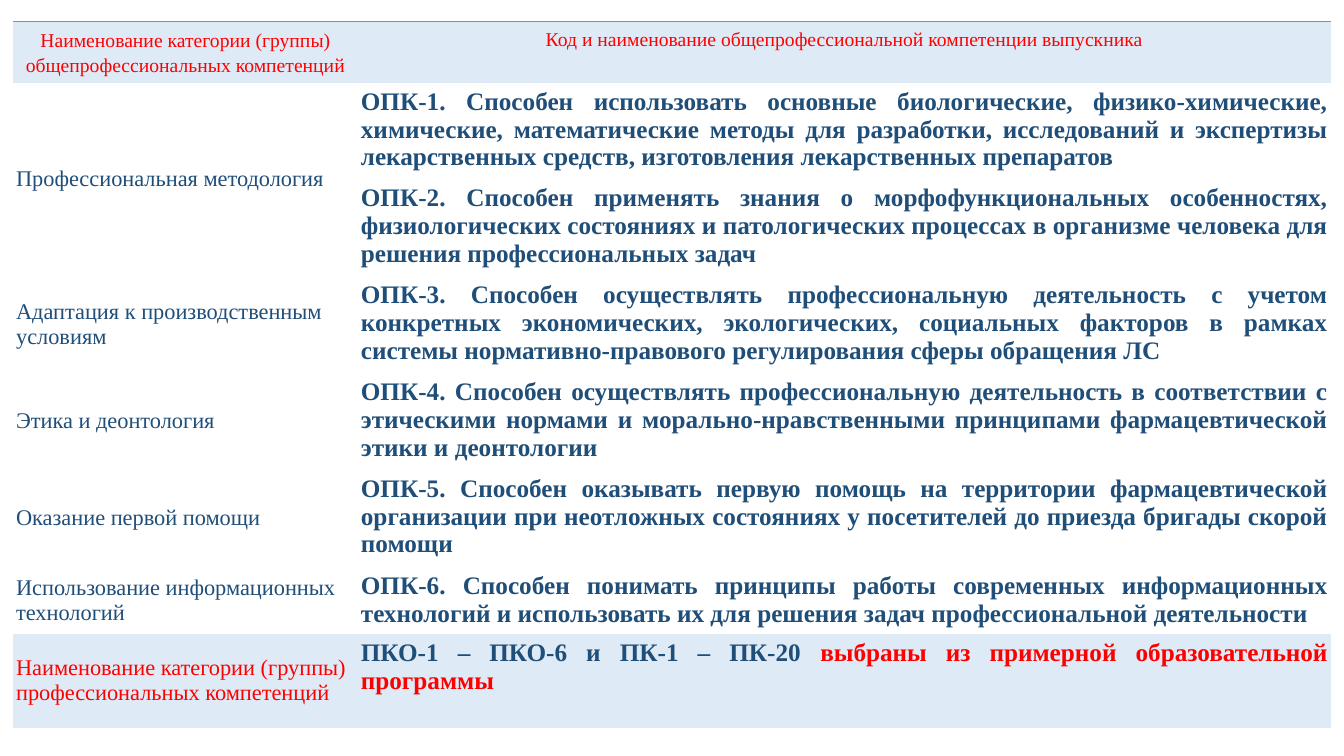
from dataclasses import dataclass

from lxml.etree import SubElement
from pptx import Presentation
from pptx.dml.color import RGBColor
from pptx.enum.text import MSO_ANCHOR as Anchor, PP_ALIGN as Align
from pptx.oxml.ns import qn
from pptx.table import Table, _Cell as Cell
from pptx.util import Inches, Pt

FONT = "Times New Roman"
RED, NAVY, PALE, BLUE = "FF0000", "1F4E79", "DEEBF7", "5B9BD5"
NO_STYLE = "{2D5ABB26-0587-4C30-8999-92F81FD0307C}"
WIDTHS = (3.42, 9.65)


@dataclass
class Run:
    text: str
    color: str = NAVY
    size: int = 16
    bold: bool = False


@dataclass
class Entry:
    runs: list[Run]
    align: Align = Align.LEFT
    anchor: Anchor = Anchor.MIDDLE
    spacing: float = 1.0


@dataclass
class Row:
    height: float
    left: Entry | None
    right: Entry | None
    fill: str | None = None


def head(text: str, anchor: Anchor) -> Entry:
    return Entry([Run(text, RED, 14)], Align.CENTER, anchor, 1.15)


def group(text: str, color: str = NAVY) -> Entry:
    return Entry([Run(text, color)])


def skill(text: str, extra: str = "", anchor: Anchor = Anchor.TOP) -> Entry:
    runs = [Run(text, NAVY, 18, True)]
    if extra:
        runs.append(Run(extra, RED, 18, True))
    return Entry(runs, Align.JUSTIFY, anchor)


ROWS = [
    Row(0.61,
        head("Наименование категории (группы) общепрофессиональных компетенций", Anchor.MIDDLE),
        head("Код и наименование общепрофессиональной компетенции выпускника", Anchor.TOP),
        PALE),
    Row(0.96, group("Профессиональная методология"),
        skill("ОПК-1. Способен использовать основные биологические, физико-химические, "
              "химические, математические методы для разработки, исследований и экспертизы "
              "лекарственных средств, изготовления лекарственных препаратов")),
    Row(0.96, None,
        skill("ОПК-2. Способен применять знания о морфофункциональных особенностях, "
              "физиологических состояниях и патологических процессах в организме человека "
              "для решения профессиональных задач")),
    Row(0.96, group("Адаптация к производственным условиям"),
        skill("ОПК-3. Способен осуществлять профессиональную деятельность с учетом "
              "конкретных экономических, экологических, социальных факторов в рамках "
              "системы нормативно-правового регулирования сферы обращения ЛС")),
    Row(0.96, group("Этика и деонтология"),
        skill("ОПК-4. Способен осуществлять профессиональную деятельность в соответствии с "
              "этическими нормами и морально-нравственными принципами фармацевтической "
              "этики и деонтологии")),
    Row(0.96, group("Оказание первой помощи"),
        skill("ОПК-5. Способен оказывать первую помощь на территории фармацевтической "
              "организации при неотложных состояниях у посетителей до приезда бригады "
              "скорой помощи")),
    Row(0.67, group("Использование информационных технологий"),
        skill("ОПК-6. Способен понимать принципы работы современных информационных "
              "технологий и использовать их для решения задач профессиональной деятельности",
              anchor=Anchor.MIDDLE)),
    Row(0.93, group("Наименование категории (группы) профессиональных компетенций", RED),
        skill("ПКО-1 – ПКО-6 и ПК-1 – ПК-20 ",
              "выбраны из примерной образовательной программы"),
        PALE),
    Row(0.32, None, None),
]


def rgb(code: str) -> RGBColor:
    return RGBColor.from_string(code)


def edge(cell: Cell, tag: str) -> None:
    """Draw one blue border; call before the cell is filled."""
    line = SubElement(cell._tc.get_or_add_tcPr(), qn(tag), w=str(Pt(1)))
    SubElement(SubElement(line, qn("a:solidFill")), qn("a:srgbClr"), val=BLUE)


def paint(cell: Cell, fill: str | None) -> None:
    cell.margin_left = cell.margin_right = Inches(0.03)
    cell.margin_top = cell.margin_bottom = Inches(0.05)
    if fill:
        cell.fill.solid()
        cell.fill.fore_color.rgb = rgb(fill)
    else:
        cell.fill.background()


def write(cell: Cell, entry: Entry) -> None:
    cell.vertical_anchor = entry.anchor
    para = cell.text_frame.paragraphs[0]
    para.alignment = entry.align
    para.line_spacing = entry.spacing
    for item in entry.runs:
        run = para.add_run()
        run.text = item.text
        font = run.font
        font.name, font.size, font.bold = FONT, Pt(item.size), item.bold
        font.color.rgb = rgb(item.color)


def fill_table(table: Table) -> None:
    for col, width in zip(table.columns, WIDTHS):
        col.width = Inches(width)
    last = len(ROWS) - 1
    for i, row in enumerate(ROWS):
        table.rows[i].height = Inches(row.height)
        for j, entry in enumerate((row.left, row.right)):
            cell = table.cell(i, j)
            if i == 0:
                edge(cell, "a:lnT")
            elif i == last:
                edge(cell, "a:lnB")
            paint(cell, row.fill)
            if entry:
                write(cell, entry)
    table.cell(1, 0).merge(table.cell(2, 0))
    table.cell(last, 0).merge(table.cell(last, 1))
    table.cell(last, 0).text_frame.paragraphs[0].font.size = Pt(12)


def main() -> None:
    deck = Presentation()
    deck.slide_width, deck.slide_height = Inches(13.33), Inches(7.5)
    slide = deck.slides.add_slide(deck.slide_layouts[6])
    frame = slide.shapes.add_table(
        len(ROWS), len(WIDTHS), Inches(0.13), Inches(0.21),
        Inches(sum(WIDTHS)), Inches(sum(row.height for row in ROWS)))
    table = frame.table
    table.first_row = table.horz_banding = False
    for style in table._tbl.iter(qn("a:tableStyleId")):
        style.text = NO_STYLE
    fill_table(table)
    deck.save("out.pptx")


if __name__ == "__main__":
    main()
